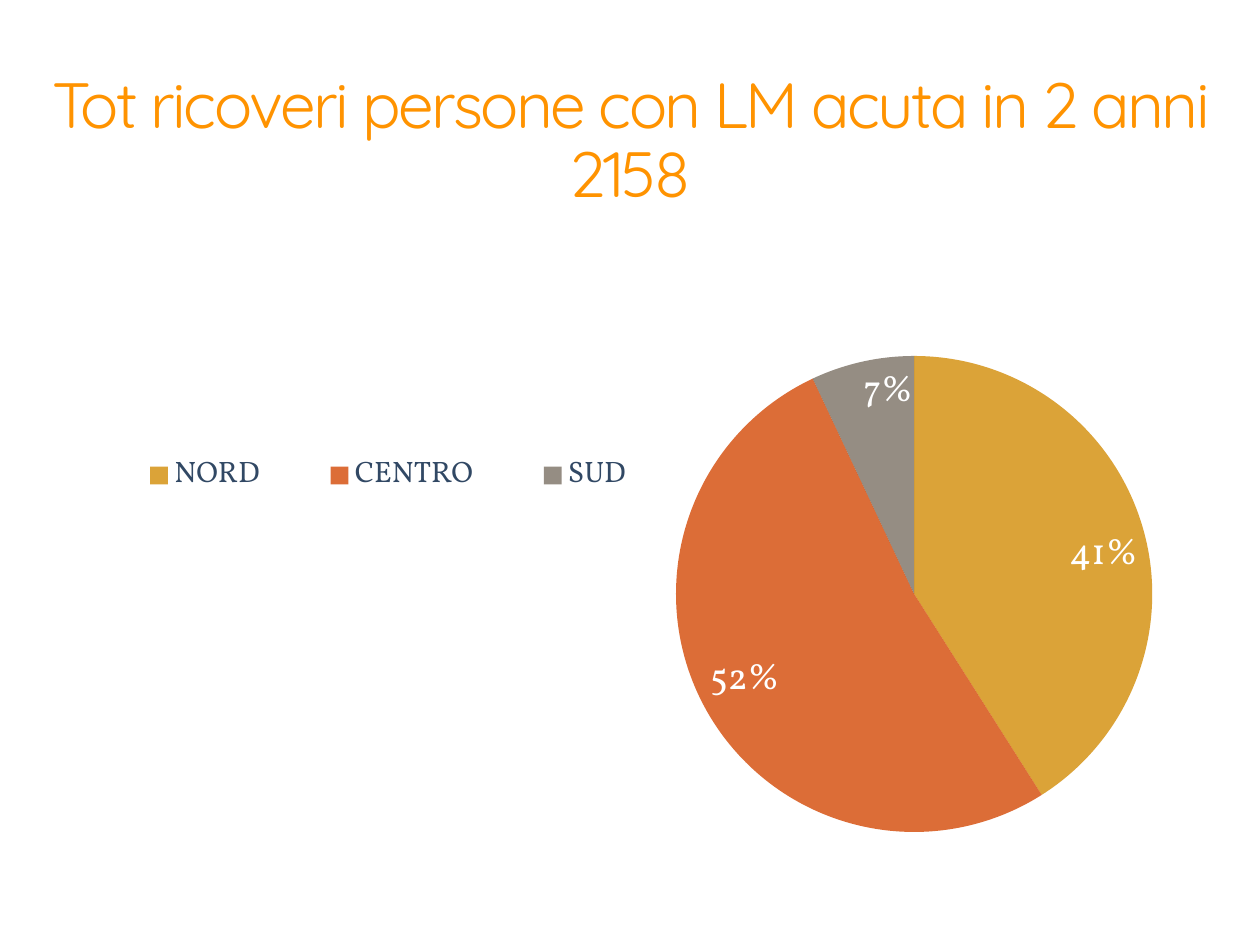
from dataclasses import dataclass

from lxml.etree import SubElement
from pptx import Presentation
from pptx.chart.chart import Chart
from pptx.chart.data import CategoryChartData
from pptx.dml.color import RGBColor
from pptx.dml.fill import FillFormat
from pptx.enum.chart import XL_CHART_TYPE, XL_LABEL_POSITION, XL_LEGEND_POSITION
from pptx.enum.text import MSO_ANCHOR, PP_ALIGN
from pptx.oxml import parse_xml
from pptx.oxml.ns import nsdecls, qn
from pptx.slide import Slide
from pptx.text.text import Font
from pptx.util import Inches, Pt

ORANGE = RGBColor(0xFF, 0x93, 0x00)
WHITE = RGBColor(0xFF, 0xFF, 0xFF)
NAVY = RGBColor(0x31, 0x48, 0x64)
GOLD = RGBColor(0xD3, 0x8C, 0x07)
RUST = RGBColor(0xD4, 0x49, 0x06)
BROWN = RGBColor(0x55, 0x48, 0x38)


@dataclass(frozen=True)
class Region:
    name: str
    percent: int
    color: RGBColor
    opacity: int


REGIONS = [
    Region("NORD", 41, GOLD, 80),
    Region("CENTRO", 52, RUST, 80),
    Region("SUD", 7, BROWN, 62),
]


def set_font(font: Font, name: str, size: int, color: RGBColor) -> None:
    font.name = name
    font.size = Pt(size)
    font.color.rgb = color


def fill_translucent(fill: FillFormat, color: RGBColor, opacity: int) -> None:
    fill.solid()
    fill.fore_color.rgb = color
    color_element = fill._xPr.find(f"{qn('a:solidFill')}/{qn('a:srgbClr')}")
    SubElement(color_element, qn("a:alpha"), val=str(opacity * 1000))


def manual_layout(x: float, y: float, width: float, height: float, inner: bool = False):
    """Return a c:layout element, in fractions of the chart area."""
    target = '<c:layoutTarget val="inner"/>' if inner else ""
    return parse_xml(
        f'<c:layout {nsdecls("c")}><c:manualLayout>{target}'
        '<c:xMode val="edge"/><c:yMode val="edge"/>'
        f'<c:x val="{x}"/><c:y val="{y}"/><c:w val="{width}"/><c:h val="{height}"/>'
        "</c:manualLayout></c:layout>"
    )


def add_title(slide: Slide) -> None:
    box = slide.shapes.add_textbox(Inches(0.39), Inches(0.49), Inches(13.44), Inches(2.24))
    frame = box.text_frame
    frame.word_wrap = True
    frame.vertical_anchor = MSO_ANCHOR.MIDDLE
    frame.margin_left = frame.margin_right = Inches(0.06)
    frame.margin_top = frame.margin_bottom = Inches(0.06)
    paragraph = frame.paragraphs[0]
    paragraph.alignment = PP_ALIGN.CENTER
    paragraph.line_spacing = 0.9
    run = paragraph.add_run()
    run.text = "Tot ricoveri persone con LM acuta in 2 anni 2158"
    set_font(paragraph.font, "Quicksand", 52, ORANGE)
    run._r.get_or_add_rPr().set("spc", "-200")


def add_legend(chart: Chart) -> None:
    chart.has_legend = True
    legend = chart.legend
    legend.position = XL_LEGEND_POSITION.RIGHT
    legend.include_in_layout = True
    set_font(legend.font, "Vollkorn", 24, NAVY)
    for layout in legend._element.findall(qn("c:layout")):
        legend._element.remove(layout)
    position = legend._element.find(qn("c:legendPos"))
    position.addnext(manual_layout(0.03, 0.2, 0.54, 0.12))


def add_pie(slide: Slide) -> None:
    data = CategoryChartData(number_format="0")
    data.categories = [region.name for region in REGIONS]
    data.add_series("Series 1", [region.percent for region in REGIONS])
    chart = slide.shapes.add_chart(
        XL_CHART_TYPE.PIE, Inches(0.63), Inches(3.95), Inches(12.5), Inches(5.46), data
    ).chart
    chart.has_title = False
    chart.font.name = "Noto Sans"
    chart.font.size = Pt(10)
    plot = chart.plots[0]
    plot.vary_by_categories = True
    for index, region in enumerate(REGIONS):
        point_format = plot.series[0].points[index].format
        fill_translucent(point_format.fill, region.color, region.opacity)
        point_format.line.fill.background()

    labels = plot.series[0].data_labels
    labels.show_percentage = True
    labels.show_value = False
    labels.number_format = "0%"
    labels.number_format_is_linked = False
    labels.position = XL_LABEL_POSITION.INSIDE_END
    set_font(labels.font, "Vollkorn", 30, WHITE)

    plot_area = chart._chartSpace.chart.plotArea
    for layout in plot_area.findall(qn("c:layout")):
        plot_area.remove(layout)
    plot_area.insert(0, manual_layout(0.56, 0.01, 0.43, 0.99, inner=True))
    add_legend(chart)


def main() -> None:
    presentation = Presentation()
    presentation.slide_width = Inches(14.22)
    presentation.slide_height = Inches(10.67)
    slide = presentation.slides.add_slide(presentation.slide_layouts[6])
    add_pie(slide)
    add_title(slide)
    presentation.save("out.pptx")


if __name__ == "__main__":
    main()
